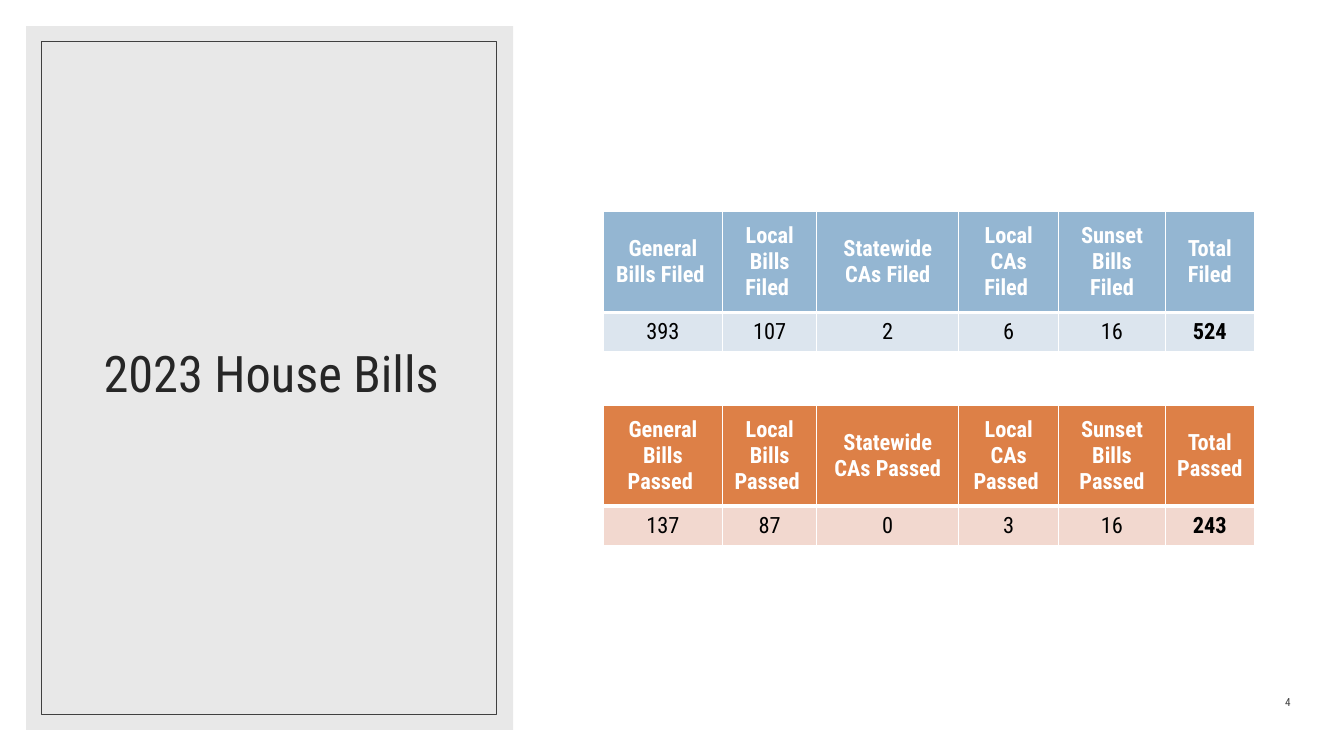
"""Build the 2023 House Bills slide with its filed and passed tables."""

from dataclasses import dataclass

from lxml import etree
from pptx import Presentation
from pptx.dml.color import RGBColor
from pptx.enum.shapes import MSO_SHAPE
from pptx.enum.text import MSO_ANCHOR, PP_ALIGN
from pptx.oxml.ns import qn
from pptx.shapes.autoshape import Shape
from pptx.slide import Slide
from pptx.table import _Cell
from pptx.text.text import TextFrame
from pptx.util import Inches, Pt

RECTANGLE = MSO_SHAPE.RECTANGLE
CENTER, RIGHT = PP_ALIGN.CENTER, PP_ALIGN.RIGHT
MIDDLE, BOTTOM = MSO_ANCHOR.MIDDLE, MSO_ANCHOR.BOTTOM
SLIDE_WIDTH, SLIDE_HEIGHT = Inches(13.33), Inches(7.5)


@dataclass(frozen=True)
class Theme:
    """Colours and type sizes of the slide."""

    font: str = "Roboto Condensed"
    panel: str = "D9D9D9"
    panel_opacity: int = 60
    title: str = "262626"
    detail: str = "404040"
    white: str = "FFFFFF"
    black: str = "000000"
    blue: str = "94B6D2"
    pale_blue: str = "DCE5EE"
    orange: str = "DD8047"
    pale_orange: str = "F2D8CF"
    title_size: float = 36
    table_size: float = 16
    number_size: float = 8
    outline_width: float = 0.5
    cell_line: float = 1
    header_line: float = 3


THEME = Theme()


@dataclass(frozen=True)
class Box:
    """A rectangle in percent of the slide's width and height."""

    left: float
    top: float
    width: float
    height: float

    def lengths(self) -> tuple[int, int, int, int]:
        """Return left, top, width and height as slide lengths."""
        return (
            int(SLIDE_WIDTH * self.left / 100),
            int(SLIDE_HEIGHT * self.top / 100),
            int(SLIDE_WIDTH * self.width / 100),
            int(SLIDE_HEIGHT * self.height / 100),
        )


@dataclass(frozen=True)
class Label:
    """A text box with one line of text."""

    text: str
    box: Box
    size: float
    color: str
    alignment: PP_ALIGN
    anchor: MSO_ANCHOR
    line_spacing: float = 1.0


@dataclass(frozen=True)
class BillTable:
    """Bill counts by kind, with the total in the last column."""

    action: str
    top: float
    counts: tuple[int, ...]
    header_fill: str
    body_fill: str


PANEL = Box(1.95, 3.47, 36.23, 93.07)
OUTLINE = Box(3.08, 5.47, 33.83, 89.07)
LABELS = (
    Label("2023 House Bills", Box(4.73, 8.13, 30.91, 83.2), THEME.title_size,
          THEME.title, CENTER, MIDDLE, 0.9),
    Label("4", Box(90.02, 90.4, 6.75, 4), THEME.number_size,
          THEME.detail, RIGHT, BOTTOM),
)
TABLE_LEFT, TABLE_WIDTH = 44.86, 48.46
ROW_HEIGHTS = (13.33, 5.2)
COLUMN_WEIGHTS = (119, 93, 141, 99, 106, 88)
HEADERS = (
    "General Bills {} ", "Local Bills {} ", "Statewide CAs {}",
    "Local CAs {} ", "Sunset Bills\n{}", "Total {}",
)
TABLES = (
    BillTable("Filed", 28, (393, 107, 2, 6, 16, 524), THEME.blue, THEME.pale_blue),
    BillTable("Passed", 53.6, (137, 87, 0, 3, 16, 243), THEME.orange, THEME.pale_orange),
)


def format_text(frame: TextFrame, size: float, color: str, alignment: PP_ALIGN,
                bold: bool = False, line_spacing: float = 1.0) -> None:
    """Format every paragraph and run of a text frame."""
    for paragraph in frame.paragraphs:
        paragraph.alignment = alignment
        paragraph.line_spacing = line_spacing
        for run in paragraph.runs:
            run.font.name = THEME.font
            run.font.size = Pt(size)
            run.font.bold = bold
            run.font.color.rgb = RGBColor.from_string(color)


def add_rectangle(slide: Slide, box: Box) -> Shape:
    """Add a bare rectangle without fill, line or shadow."""
    shape = slide.shapes.add_shape(RECTANGLE, *box.lengths())
    shape.shadow.inherit = False
    shape.fill.background()
    shape.line.fill.background()
    return shape


def add_side_panel(slide: Slide) -> None:
    """Add the translucent panel."""
    panel = add_rectangle(slide, PANEL)
    panel.fill.solid()
    panel.fill.fore_color.rgb = RGBColor.from_string(THEME.panel)
    color = panel.fill._xPr.find(qn("a:solidFill"))[0]
    etree.SubElement(color, qn("a:alpha"), val=str(THEME.panel_opacity * 1000))


def add_outline(slide: Slide) -> None:
    """Add the thin frame inside the panel."""
    outline = add_rectangle(slide, OUTLINE)
    outline.line.color.rgb = RGBColor.from_string(THEME.detail)
    outline.line.width = Pt(THEME.outline_width)


def add_label(slide: Slide, label: Label) -> None:
    """Add a text box for a label."""
    frame = slide.shapes.add_textbox(*label.box.lengths()).text_frame
    frame.word_wrap = True
    frame.vertical_anchor = label.anchor
    frame.text = label.text
    format_text(frame, label.size, label.color, label.alignment,
                line_spacing=label.line_spacing)


def set_borders(cell: _Cell, top: float, bottom: float) -> None:
    """Give a cell white borders."""
    properties = cell._tc.get_or_add_tcPr()
    widths = {"lnL": THEME.cell_line, "lnR": THEME.cell_line, "lnT": top, "lnB": bottom}
    for position, (side, width) in enumerate(widths.items()):
        line = etree.Element(qn(f"a:{side}"), w=str(Pt(width)))
        fill = etree.SubElement(line, qn("a:solidFill"))
        etree.SubElement(fill, qn("a:srgbClr"), val=THEME.white)
        properties.insert(position, line)


def fill_cell(cell: _Cell, text: str, fill: str, color: str, bold: bool) -> None:
    """Write and format one table cell."""
    cell.fill.solid()
    cell.fill.fore_color.rgb = RGBColor.from_string(fill)
    cell.vertical_anchor = MIDDLE
    cell.margin_left = cell.margin_right = Inches(0.09)
    cell.margin_top = cell.margin_bottom = Inches(0.04)
    cell.text_frame.text = text
    format_text(cell.text_frame, THEME.table_size, color, CENTER, bold)


def add_bill_table(slide: Slide, bills: BillTable) -> None:
    """Add a table with one header row and one row of counts."""
    box = Box(TABLE_LEFT, bills.top, TABLE_WIDTH, sum(ROW_HEIGHTS))
    table = slide.shapes.add_table(
        len(ROW_HEIGHTS), len(HEADERS), *box.lengths()).table
    table.first_row = table.horz_banding = False
    for row, share in zip(table.rows, ROW_HEIGHTS):
        row.height = int(SLIDE_HEIGHT * share / 100)
    table_width = box.lengths()[2]
    for index, (header, count) in enumerate(zip(HEADERS, bills.counts)):
        weight = COLUMN_WEIGHTS[index]
        table.columns[index].width = int(table_width * weight / sum(COLUMN_WEIGHTS))
        heading, value = table.cell(0, index), table.cell(1, index)
        fill_cell(heading, header.format(bills.action), bills.header_fill, THEME.white, True)
        fill_cell(value, str(count), bills.body_fill, THEME.black, index == len(HEADERS) - 1)
        set_borders(heading, THEME.cell_line, THEME.header_line)
        set_borders(value, THEME.header_line, THEME.cell_line)


def main() -> None:
    """Build and save the presentation."""
    presentation = Presentation()
    presentation.slide_width, presentation.slide_height = SLIDE_WIDTH, SLIDE_HEIGHT
    slide = presentation.slides.add_slide(presentation.slide_layouts[6])
    add_side_panel(slide)
    add_outline(slide)
    for label in LABELS:
        add_label(slide, label)
    for bills in TABLES:
        add_bill_table(slide, bills)
    presentation.save("out.pptx")


if __name__ == "__main__":
    main()
